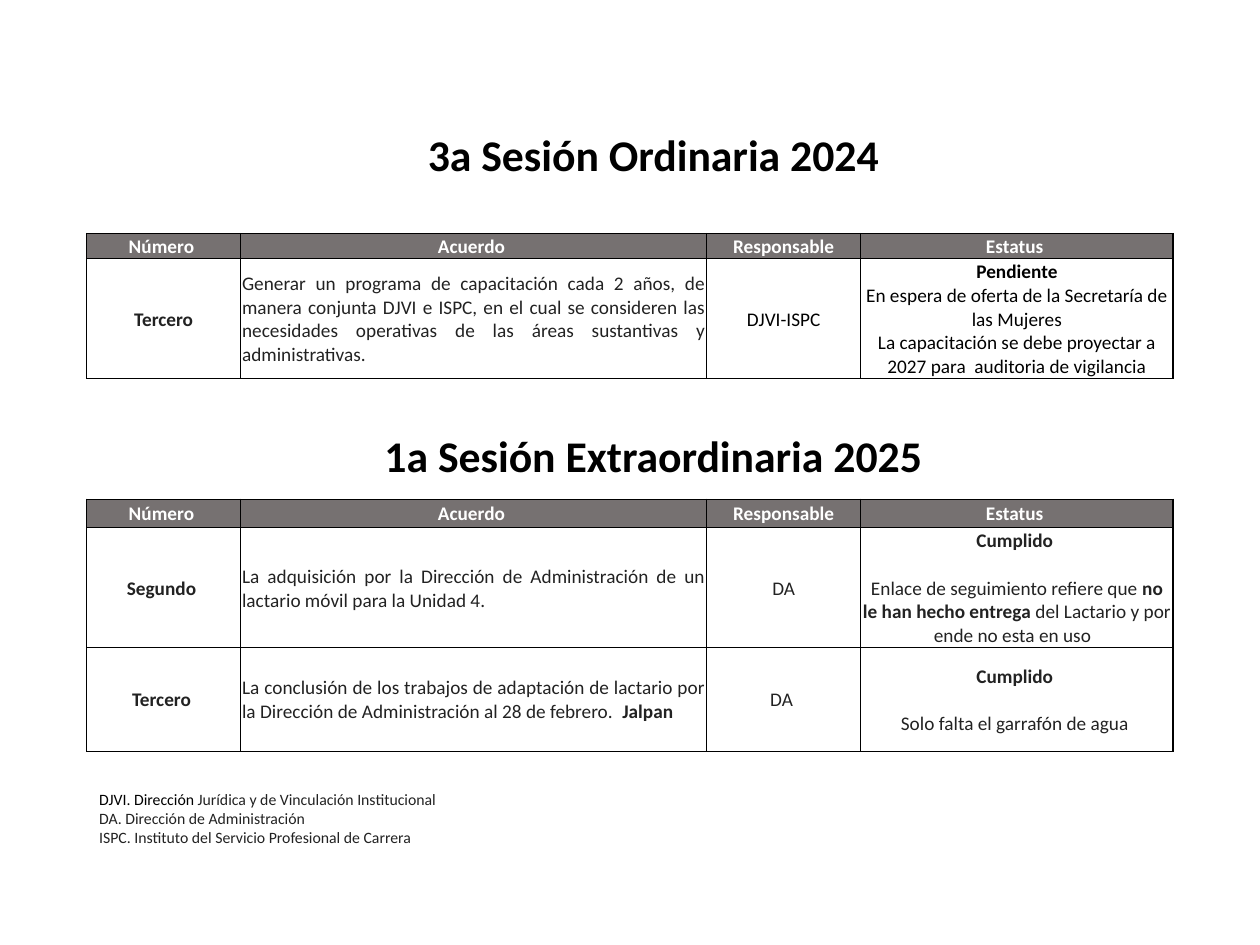
"""Build the slide that tracks the agreements of two committee sessions."""
from dataclasses import dataclass

from lxml import etree
from pptx import Presentation
from pptx.dml.color import RGBColor
from pptx.enum.text import MSO_ANCHOR, MSO_AUTO_SIZE, PP_ALIGN
from pptx.oxml.ns import qn
from pptx.slide import Slide
from pptx.util import Cm, Pt

CENTER, JUSTIFY, LEFT = PP_ALIGN.CENTER, PP_ALIGN.JUSTIFY, PP_ALIGN.LEFT
MIDDLE, TOP = MSO_ANCHOR.MIDDLE, MSO_ANCHOR.TOP
FIXED = MSO_AUTO_SIZE.NONE

COLORS = {"black": "000000", "white": "FFFFFF", "ink": "222222", "header": "767171"}
HEADINGS = ["Número ", "Acuerdo ", "Responsable", "Estatus "]
COLUMN_WIDTHS = [3.1, 9.4, 3.1, 6.3]
TABLE_LEFT = 1.75
STATUS_GAP = 13.4


@dataclass
class AgreementSlide:
    """Style and current slide, with a method for each kind of element."""

    slide: Slide
    font: str = "Calibri"
    title_size: float = 25
    table_size: float = 11
    note_size: float = 9

    def format(self, paragraph, size, color, bold=False, align=LEFT):
        """Set the alignment and the shared font of a paragraph."""
        paragraph.alignment = align
        font = paragraph.font
        font.name, font.size, font.bold = self.font, Pt(size), bold
        font.color.rgb = RGBColor.from_string(COLORS[color])

    def heading(self, shape, text, top):
        """Place a session heading and format its text."""
        shape.left, shape.top, shape.width, shape.height = map(Cm, (3.58, top, 19.18, 1.32))
        frame = shape.text_frame
        frame.word_wrap, frame.auto_size, frame.vertical_anchor = True, FIXED, TOP
        frame.text = text
        self.format(frame.paragraphs[0], self.title_size, "black", True, CENTER)

    def title(self, text, top):
        """Use the title placeholder as a heading."""
        self.heading(self.slide.shapes.title, text, top)

    def subtitle(self, text, top):
        """Add a text box as a heading."""
        self.heading(self.slide.shapes.add_textbox(0, 0, 0, 0), text, top)

    def notes(self, lead, lines, top):
        """Add the abbreviations, the first one opening with a black lead."""
        frame = self.slide.shapes.add_textbox(
            Cm(TABLE_LEFT), Cm(top), Cm(13.13), Cm(1.42)).text_frame
        frame.word_wrap = True
        frame.text = "\n".join(lines)
        for paragraph in frame.paragraphs:
            self.format(paragraph, self.note_size, "ink")
        first = frame.paragraphs[0]
        rest = first.runs[0].text
        first.runs[0].text = lead
        first.runs[0].font.color.rgb = RGBColor.from_string(COLORS["black"])
        first.add_run().text = rest

    def border(self, cell, right_width):
        """Draw the four cell borders."""
        properties = cell._tc.get_or_add_tcPr()
        for side, width in (("L", 0.5), ("R", right_width), ("T", 0.5), ("B", 0.5)):
            line = etree.SubElement(properties, qn(f"a:ln{side}"), w=str(Pt(width)))
            fill = etree.SubElement(line, qn("a:solidFill"))
            etree.SubElement(fill, qn("a:srgbClr"), val=COLORS["black"])

    def cell(self, cell, paragraphs, color, align, last, gap=0):
        """Fill a cell with paragraphs, each a list of (text, bold) runs."""
        cell.margin_left = cell.margin_right = cell.margin_top = Cm(0.03)
        cell.margin_bottom = 0
        cell.vertical_anchor = MIDDLE
        self.border(cell, 1 if last else 0.5)
        frame = cell.text_frame
        for index, runs in enumerate(paragraphs):
            paragraph = frame.add_paragraph() if index else frame.paragraphs[0]
            if len(runs) == 1:
                paragraph.text = runs[0][0]
            else:
                for text, bold in runs:
                    run = paragraph.add_run()
                    run.text, run.font.bold = text, bold
            self.format(paragraph, self.table_size, color, runs[0][1], align)
            if index and gap:
                paragraph.space_before = Pt(gap)

    def table(self, top, heights, agreements, late_color="ink", gap=0):
        """Add a table of agreements; the last two columns use late_color."""
        shape = self.slide.shapes.add_table(
            len(heights), len(HEADINGS), Cm(TABLE_LEFT), Cm(top),
            Cm(sum(COLUMN_WIDTHS)), Cm(sum(heights)))
        table = shape.table
        table.first_row = table.horz_banding = False
        for column, width in zip(table.columns, COLUMN_WIDTHS):
            column.width = Cm(width)
        for row, height in zip(table.rows, heights):
            row.height = Cm(height)
        last = len(HEADINGS) - 1
        for column, text in enumerate(HEADINGS):
            header = table.cell(0, column)
            self.cell(header, [[(text, True)]], "white", CENTER, column == last)
            header.fill.solid()
            header.fill.fore_color.rgb = RGBColor.from_string(COLORS["header"])
        for row, (number, agreement, owner, status) in enumerate(agreements, 1):
            contents = [[[(number, True)]], [agreement], [[(owner, False)]], status]
            for column, paragraphs in enumerate(contents):
                body = table.cell(row, column)
                color = late_color if column > 1 else "ink"
                align = JUSTIFY if column == 1 else CENTER
                self.cell(body, paragraphs, color, align, column == last, gap)
                body.fill.background()


def main():
    """Create the presentation and save it."""
    deck = Presentation()
    deck.slide_width, deck.slide_height = Cm(25.4), Cm(19.05)
    page = AgreementSlide(deck.slides.add_slide(deck.slide_layouts[5]))

    page.title("3a Sesión Ordinaria 2024", 2.44)
    page.table(4.7, [0.48, 2.31], [
        ("Tercero",
         [("Generar un programa de capacitación cada 2 años, de manera conjunta DJVI e ISPC, "
           "en el cual se consideren las necesidades operativas de las áreas sustantivas y "
           "administrativas.", False)],
         "DJVI-ISPC",
         [[("Pendiente", True)],
          [("En espera de oferta de la Secretaría de las Mujeres\n"
            "La capacitación se debe proyectar a\n 2027 para  auditoria de vigilancia ", False)]]),
    ], late_color="black")

    page.subtitle("1a Sesión Extraordinaria 2025", 8.51)
    page.table(10.06, [0.58, 2.08, 2.08], [
        ("Segundo ",
         [("La adquisición por la Dirección de Administración de un lactario móvil para la "
           "Unidad 4.", False)],
         "DA",
         [[("Cumplido ", True)],
          [("Enlace de seguimiento refiere que ", False), ("no le han hecho entrega ", True),
           ("del Lactario y por ende no esta en uso  ", False)]]),
        ("Tercero ",
         [("La conclusión de los trabajos de adaptación de lactario por la Dirección de "
           "Administración al 28 de febrero.  ", False), ("Jalpan", True)],
         "DA ",
         [[("Cumplido ", True)], [("Solo falta el garrafón de agua ", False)]]),
    ], gap=STATUS_GAP)

    page.notes("DJVI. Dirección ", [
        "Jurídica y de Vinculación Institucional",
        "DA. Dirección de Administración",
        "ISPC. Instituto del Servicio Profesional de Carrera",
    ], 15.8)
    deck.save("out.pptx")


if __name__ == "__main__":
    main()
